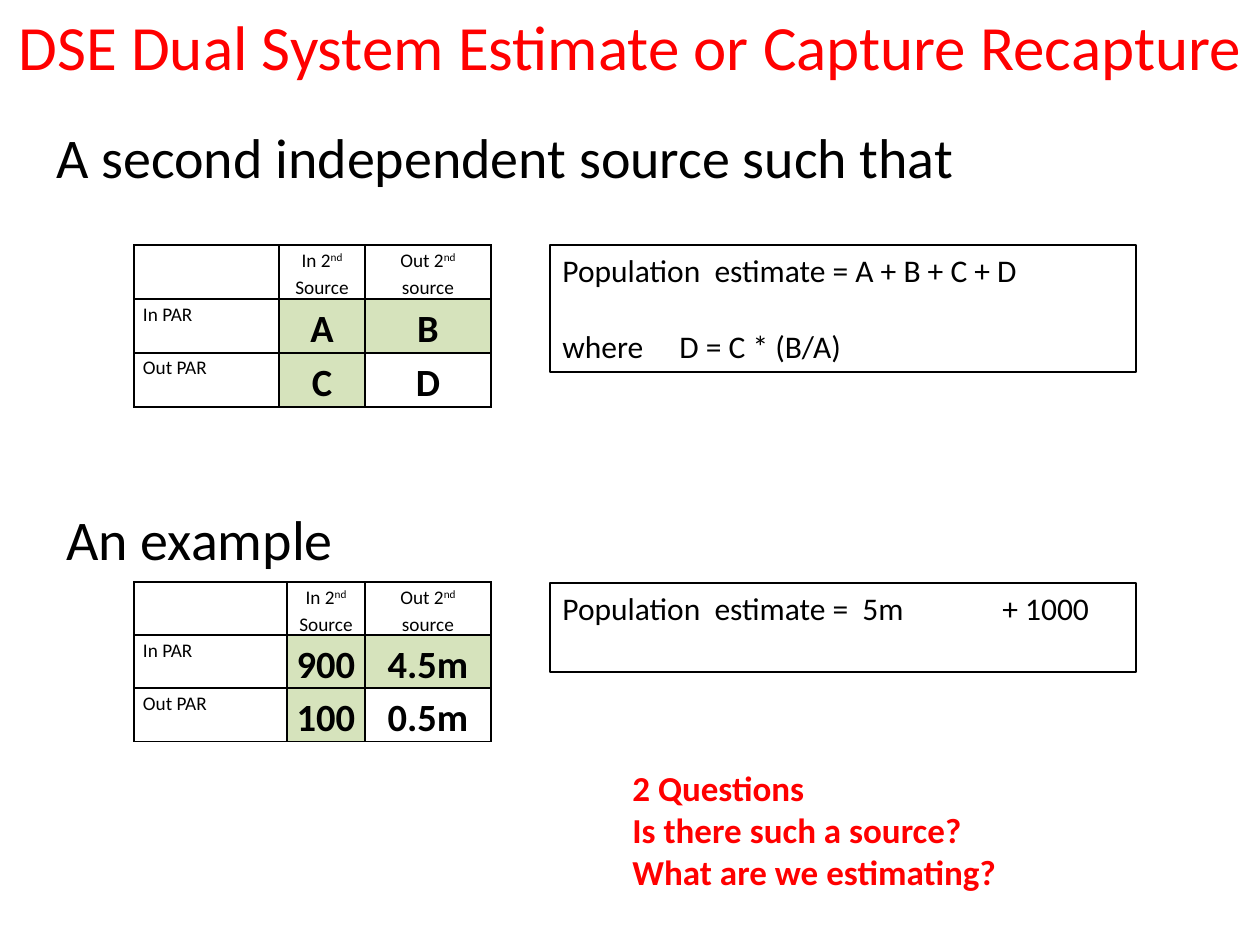
from lxml.etree import SubElement
from pptx import Presentation
from pptx.dml.color import RGBColor
from pptx.enum.shapes import MSO_SHAPE as Shape
from pptx.enum.text import MSO_ANCHOR as Anchor, PP_ALIGN as Align
from pptx.oxml import parse_xml
from pptx.oxml.ns import nsdecls, qn
from pptx.util import Emu, Pt

BLACK = RGBColor(0, 0, 0)
RED = RGBColor(0xFF, 0, 0)
GREEN = RGBColor(0xD6, 0xE3, 0xBC)
HEADS = (("In 2", " Source"), ("Out 2", " source"))


def px(n):
    return Emu(round(n * 914400 / 126))


def style(para, size, color=BLACK, bold=False):
    font = para.font
    font.name, font.size, font.bold = "Calibri", Pt(size), bold
    font.color.rgb = color


def write(frame, lines, size, color=BLACK, bold=False, tab=0, gap=0):
    """Fill a frame, with an optional tab stop and gap between paragraphs."""
    frame.word_wrap = True
    for i, line in enumerate(lines):
        para = frame.paragraphs[0] if i == 0 else frame.add_paragraph()
        para.text = line
        if i and gap:
            para.space_before = Pt(gap)
        if tab:
            stops = SubElement(para._p.get_or_add_pPr(), qn("a:tabLst"))
            SubElement(stops, qn("a:tab"), pos=str(px(tab)), algn="l")
        style(para, size, color, bold)


def add_text(slide, x, y, w, h, lines, size, color=BLACK, bold=False):
    frame = slide.shapes.add_textbox(px(x), px(y), px(w), px(h)).text_frame
    write(frame, lines, size, color, bold)
    return frame


def add_box(slide, y, h, lines, tab, gap=0):
    box = slide.shapes.add_shape(Shape.RECTANGLE, px(550), px(y), px(586), px(h))
    box.shadow.inherit = False
    box.fill.background()
    box.line.color.rgb = BLACK
    box.line.width = Pt(0.75)
    frame = box.text_frame
    frame.vertical_anchor = Anchor.TOP
    write(frame, lines, 18, tab=tab, gap=gap)
    for para in frame.paragraphs:
        para.alignment = Align.LEFT


def add_edges(cell):
    props = cell._tc.get_or_add_tcPr()
    for i, side in enumerate(("lnL", "lnR", "lnT", "lnB")):
        props.insert(i, parse_xml(
            f'<a:{side} {nsdecls("a")} w="{Pt(1)}"><a:solidFill>'
            f'<a:srgbClr val="{BLACK}"/></a:solidFill></a:{side}>'))


def fill_cell(cell, parts, size=11, bold=False, center=True, fill=None):
    """Write a cell; the second of several parts is superscript."""
    cell.margin_left = cell.margin_right = px(9)
    cell.margin_top = cell.margin_bottom = 0
    para = cell.text_frame.paragraphs[0]
    para.alignment = Align.CENTER if center else Align.LEFT
    para.line_spacing = 1.15
    for i, part in enumerate(parts):
        run = para.add_run()
        run.text = part
        if i == 1:
            run._r.get_or_add_rPr().set("baseline", "30000")
    style(para, size, bold=bold)
    if fill:
        cell.fill.solid()
        cell.fill.fore_color.rgb = fill
    else:
        cell.fill.background()
    add_edges(cell)


def add_grid(slide, y, row, widths, values):
    table = slide.shapes.add_table(
        3, 3, px(134), px(y), px(sum(widths)), px(row * 3)).table
    table.first_row = table.horz_banding = False
    for col, width in zip(table.columns, widths):
        col.width = px(width)
    for line in table.rows:
        line.height = px(row)
    # Headings
    fill_cell(table.cell(0, 0), ())
    for c, (start, end) in enumerate(HEADS, 1):
        fill_cell(table.cell(0, c), (start, "nd", end))
    for r, label in enumerate(("In PAR", "Out PAR"), 1):
        fill_cell(table.cell(r, 0), (label,), center=False)
    # Counts: all but the unknown last one are shaded
    for i, value in enumerate(values):
        fill_cell(table.cell(1 + i // 2, 1 + i % 2), (value,), 22, True,
                  fill=GREEN if i < 3 else None)


def main():
    deck = Presentation()
    deck.slide_width, deck.slide_height = px(1260), px(945)
    slide = deck.slides.add_slide(deck.slide_layouts[6])

    # Title
    title = add_text(slide, 0, -34, 1260, 158,
                     ["DSE Dual System Estimate or Capture Recapture"], 36, RED)
    title.vertical_anchor = Anchor.MIDDLE
    title.margin_left = title.margin_right = 0
    title.paragraphs[0].alignment = Align.CENTER

    # Method
    add_text(slide, 44, 116, 1134, 103,
             ["A second independent source such that"], 32)
    add_grid(slide, 245, 54, (145, 86, 126), "ABCD")
    add_box(slide, 245, 127, ["Population  estimate = A + B + C + D",
                              "where\tD = C * (B/A)"], tab=117, gap=22)

    # Example
    add_text(slide, 54, 498, 1134, 103, ["An example"], 32)
    add_grid(slide, 582, 53, (153, 78, 126), ("900", "4.5m", "100", "0.5m"))
    add_box(slide, 583, 89, ["Population  estimate =  5m\t+ 1000"], tab=440)

    # Questions
    add_text(slide, 620, 760, 576, 140,
             ["2 Questions", "Is there such a source?",
              "What are we estimating?"], 20, RED, True)
    deck.save("out.pptx")


if __name__ == "__main__":
    main()
